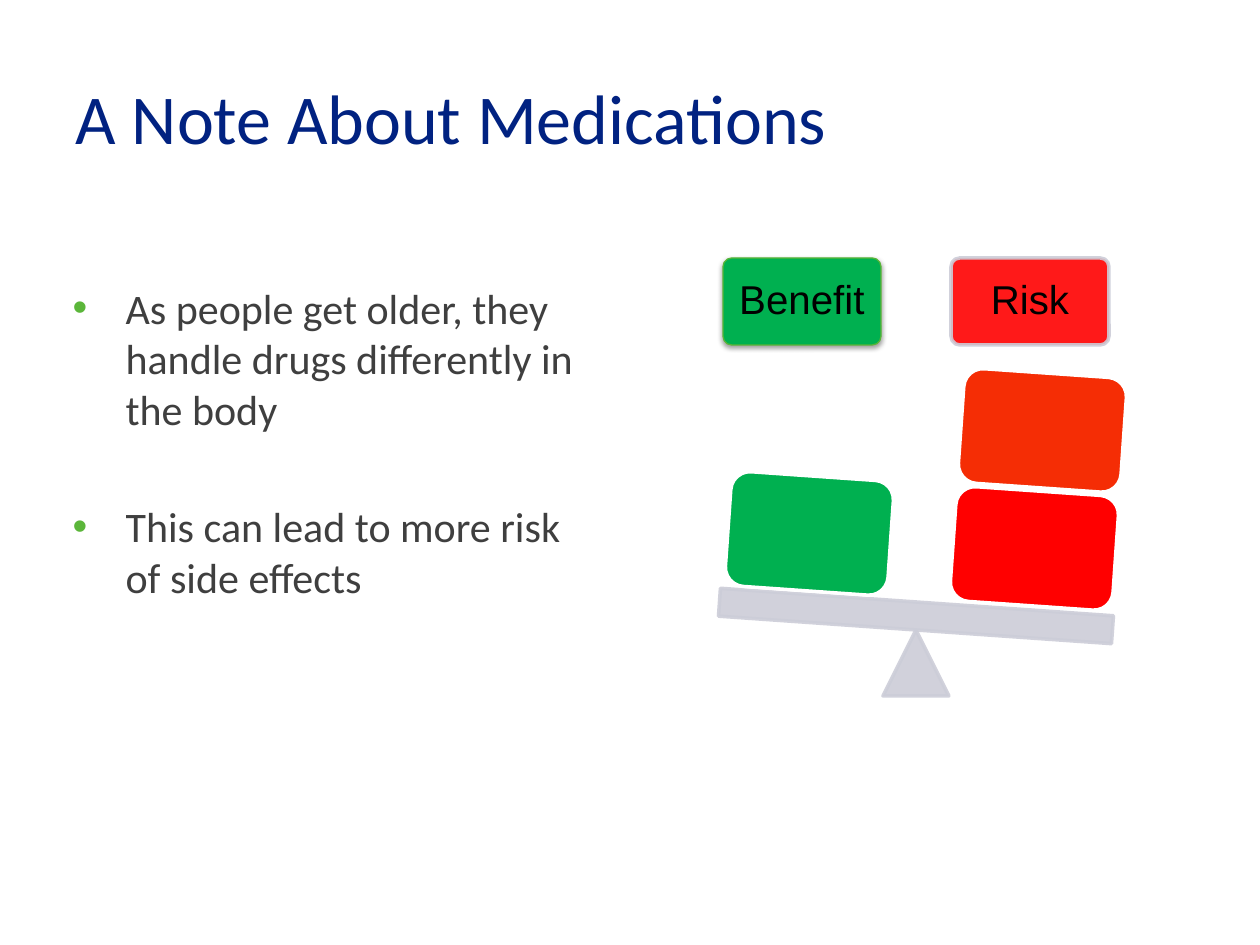
from lxml import etree
from pptx import Presentation
from pptx.dml.color import RGBColor
from pptx.enum.shapes import MSO_SHAPE
from pptx.enum.text import MSO_ANCHOR, MSO_AUTO_SIZE, PP_ALIGN
from pptx.oxml.ns import qn
from pptx.util import Emu, Inches, Pt

ROUNDED = MSO_SHAPE.ROUNDED_RECTANGLE
RECTANGLE = MSO_SHAPE.RECTANGLE
TRIANGLE = MSO_SHAPE.ISOSCELES_TRIANGLE
MIDDLE, TOP = MSO_ANCHOR.MIDDLE, MSO_ANCHOR.TOP
LEFT, CENTER = PP_ALIGN.LEFT, PP_ALIGN.CENTER
NO_AUTOFIT = MSO_AUTO_SIZE.NONE

PX = 914400 / 126
GREEN, RED, ORANGE = "00B050", "FF0000", "F52D05"
GREY, WHITE, BLACK = "CCCDD8", "FFFFFF", "000000"
TILT = 4


def px(value):
    return Emu(round(value * PX))


def color(value):
    return RGBColor.from_string(value)


class SlideBuilder:
    heading_font = "Calibri"
    label_font = "Arial"
    title_color = "012281"
    body_color = "3F3F3F"
    bullet_color = "5BB63A"

    def __init__(self, slide):
        self.slide = slide

    def place(self, shape, bounds):
        shape.left, shape.top, shape.width, shape.height = map(px, bounds)

    def style_runs(self, paragraph, font, size, ink):
        for span in paragraph.runs:
            span.font.name = font
            span.font.size = Pt(size)
            span.font.color.rgb = color(ink)

    def title(self, text, bounds):
        box = self.slide.shapes.title
        self.place(box, bounds)
        frame = box.text_frame
        frame.text = text
        frame.auto_size = NO_AUTOFIT
        frame.vertical_anchor = MIDDLE
        para = frame.paragraphs[0]
        para.alignment = LEFT
        self.style_runs(para, self.heading_font, 40, self.title_color)

    def bullets(self, items, bounds, gap):
        box = self.slide.placeholders[1]
        self.place(box, bounds)
        frame = box.text_frame
        frame.text = "\n".join(items)
        frame.auto_size = NO_AUTOFIT
        frame.vertical_anchor = TOP
        for index, para in enumerate(frame.paragraphs):
            self.add_bullet(para)
            para.space_before = Pt(gap if index else 0)
            self.style_runs(para, self.heading_font, 24, self.body_color)

    def add_bullet(self, para):
        properties = para._p.get_or_add_pPr()
        properties.set("marL", str(Inches(0.5)))
        properties.set("indent", str(Inches(-0.42)))
        tint = etree.SubElement(properties, qn("a:buClr"))
        etree.SubElement(tint, qn("a:srgbClr"), val=self.bullet_color)
        etree.SubElement(properties, qn("a:buFont"), typeface="Arial")
        etree.SubElement(properties, qn("a:buChar"), char="•")

    def shape(self, kind, bounds, fill, line, width=2, tilt=0, opacity=100):
        shape = self.slide.shapes.add_shape(kind, *map(px, bounds))
        shape.shadow.inherit = False
        shape.rotation = tilt
        shape.fill.solid()
        shape.fill.fore_color.rgb = color(fill)
        shape.line.color.rgb = color(line)
        shape.line.width = Pt(width)
        if opacity < 100:
            for tint in shape._element.spPr.iter(qn("a:srgbClr")):
                etree.SubElement(tint, qn("a:alpha"), val=str(opacity * 1000))
        return shape

    def label(self, text, bounds, fill, line, width=2, opacity=100):
        box = self.shape(ROUNDED, bounds, fill, line, width, opacity=opacity)
        box.adjustments[0] = 0.1
        frame = box.text_frame
        frame.text = text
        frame.word_wrap = True
        frame.vertical_anchor = MIDDLE
        frame.margin_left = frame.margin_right = px(10)
        para = frame.paragraphs[0]
        para.alignment = CENTER
        para.line_spacing = 0.9
        self.style_runs(para, self.label_font, 23, BLACK)
        return box

    def drop_shadow(self, shape):
        effects = shape._element.spPr.find(qn("a:effectLst"))
        shadow = etree.SubElement(
            effects, qn("a:outerShdw"), blurRad=str(Pt(3.1)),
            dist=str(Pt(1.6)), dir="5400000", rotWithShape="0")
        tint = etree.SubElement(shadow, qn("a:srgbClr"), val=BLACK)
        etree.SubElement(tint, qn("a:alpha"), val="38000")


def main():
    deck = Presentation()
    deck.slide_width, deck.slide_height = Inches(10), Inches(7.5)
    page = SlideBuilder(deck.slides.add_slide(deck.slide_layouts[1]))

    page.title("A Note About Medications", (63, 38, 1134, 158))
    page.bullets(
        ["As people get older, they handle drugs differently in the body",
         "This can lead to more risk of side effects"],
        (50, 276, 557, 544), gap=38.5)

    benefit = page.label("Benefit", (723, 258, 158, 87), GREEN, "58B536", 0.75)
    page.drop_shadow(benefit)
    page.label("Risk", (951, 258, 158, 87), RED, GREY, opacity=90)

    page.shape(TRIANGLE, (883, 630, 66, 66), GREY, GREY, opacity=90)
    page.shape(RECTANGLE, (719, 602, 394, 28), GREY, GREY, tilt=TILT, opacity=90)
    for left, top, fill in ((953, 491, RED), (961, 373, ORANGE), (728, 476, GREEN)):
        page.shape(ROUNDED, (left, top, 163, 115), fill, WHITE, tilt=TILT)

    deck.save("out.pptx")


if __name__ == "__main__":
    main()
